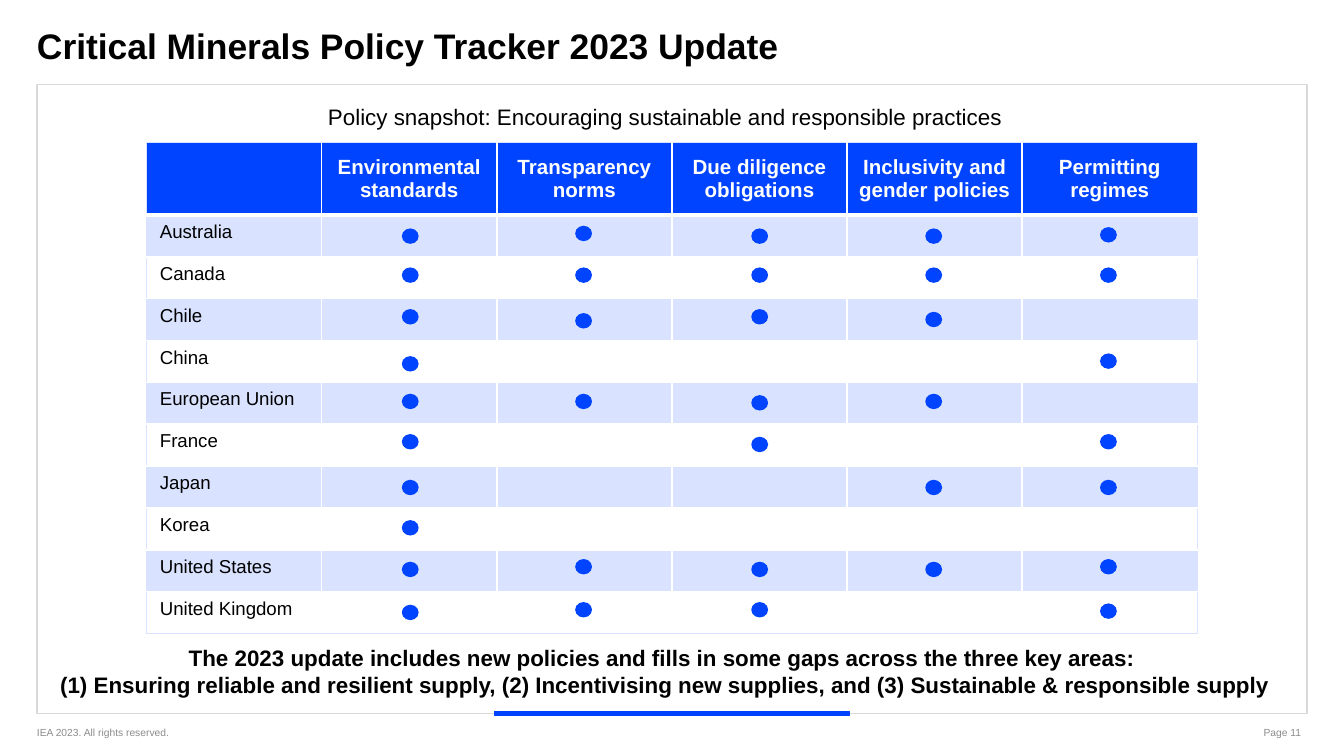
from dataclasses import dataclass
from typing import Any, Optional

from lxml.etree import SubElement
from pptx import Presentation
from pptx.dml.color import RGBColor
from pptx.enum.shapes import MSO_SHAPE
from pptx.enum.text import MSO_ANCHOR, MSO_AUTO_SIZE, PP_ALIGN
from pptx.oxml.ns import qn
from pptx.util import Emu, Pt

EMU_PER_PX = 4572
BLUE, PALE, WHITE, BLACK = "0044FF", "D9E3FF", "FFFFFF", "000000"
GREY, FRAME_GREY = "8C8C8C", "D9D9D9"


@dataclass(frozen=True)
class Box:
    left: int
    top: int
    width: int
    height: int


@dataclass(frozen=True)
class Style:
    size: float
    color: str = BLACK
    bold: bool = False
    align: Any = PP_ALIGN.LEFT
    anchor: Any = MSO_ANCHOR.TOP
    insets: tuple[int, int, int, int] = (0, 10, 20, 10)


@dataclass(frozen=True)
class Policy:
    country: str
    dot_tops: tuple[Optional[int], ...]


TABLE = Box(218, 212, 1564, 731)
HEADER_HEIGHT = 108
DOT_WIDTH, DOT_HEIGHT = 25, 23
DOT_LEFTS = (598, 856, 1118, 1377, 1637)
AREAS = (
    "Environmental standards",
    "Transparency norms",
    "Due diligence obligations",
    "Inclusivity and gender policies",
    "Permitting regimes",
)
POLICIES = (
    Policy("Australia", (340, 336, 340, 340, 338)),
    Policy("Canada", (398, 398, 398, 398, 398)),
    Policy("Chile", (460, 466, 460, 464, None)),
    Policy("China", (530, None, None, None, 526)),
    Policy("European Union", (586, 586, 588, 586, None)),
    Policy("France", (646, None, 650, None, 646)),
    Policy("Japan", (714, None, None, 714, 714)),
    Policy("Korea", (774, None, None, None, None)),
    Policy("United States", (836, 832, 836, 836, 832)),
    Policy("United Kingdom", (900, 896, 896, None, 898)),
)

HEADING = Style(19, bold=True, insets=(0, 0, 0, 0))
SNAPSHOT = Style(12, align=PP_ALIGN.CENTER)
SUMMARY = Style(12, bold=True, align=PP_ALIGN.CENTER, anchor=MSO_ANCHOR.MIDDLE,
                insets=(0, 0, 20, 16))
COPYRIGHT = Style(5.5, GREY, anchor=MSO_ANCHOR.MIDDLE)
PAGE = Style(5.5, GREY, align=PP_ALIGN.RIGHT, anchor=MSO_ANCHOR.MIDDLE)
AREA = Style(11, WHITE, True, PP_ALIGN.CENTER, MSO_ANCHOR.MIDDLE, (0, 0, 0, 0))
COUNTRY = Style(10, insets=(20, 10, 20, 10))
BLANK = Style(10, insets=(0, 0, 0, 0))


def px(length: int) -> Emu:
    return Emu(length * EMU_PER_PX)


def rgb(color: str) -> RGBColor:
    return RGBColor.from_string(color)


def apply(target: Any, values: dict[str, Any]) -> None:
    for name, value in values.items():
        setattr(target, name, value)


def place(box: Box) -> tuple[Emu, Emu, Emu, Emu]:
    return px(box.left), px(box.top), px(box.width), px(box.height)


def margins(style: Style) -> dict[str, Emu]:
    sides = ("margin_left", "margin_top", "margin_right", "margin_bottom")
    return dict(zip(sides, map(px, style.insets)))


def write(frame: Any, text: str, style: Style) -> None:
    paragraph = frame.paragraphs[0]
    apply(paragraph, {"alignment": style.align, "space_before": Pt(0), "space_after": Pt(0)})
    for index, line in enumerate(text.split("\n")):
        if index:
            paragraph.add_line_break()
            SubElement(paragraph._p[-1], qn("a:rPr"), sz=str(int(style.size * 100)))
        run = paragraph.add_run()
        run.text = line
        apply(run.font, {"name": "Arial", "size": Pt(style.size), "bold": style.bold})
        run.font.color.rgb = rgb(style.color)


def format_text(shape: Any, text: str, style: Style) -> None:
    apply(shape.text_frame, {"word_wrap": True, "auto_size": MSO_AUTO_SIZE.NONE,
                             "vertical_anchor": style.anchor, **margins(style)})
    write(shape.text_frame, text, style)


def draw_text(slide: Any, box: Box, text: str, style: Style) -> None:
    format_text(slide.shapes.add_textbox(*place(box)), text, style)


def draw_shape(slide: Any, kind: Any, box: Box, fill: Optional[str] = None,
               line: Optional[str] = None, width: float = 0) -> None:
    shape = slide.shapes.add_shape(kind, *place(box))
    shape.shadow.inherit = False
    if fill:
        shape.fill.solid()
        shape.fill.fore_color.rgb = rgb(fill)
    else:
        shape.fill.background()
    if line:
        shape.line.color.rgb = rgb(line)
        shape.line.width = Pt(width)
    else:
        shape.line.fill.background()


def draw_border(cell: Any, side: str, color: str, width: int) -> None:
    border = SubElement(cell._tc.get_or_add_tcPr(), qn(f"a:ln{side}"), w=str(int(Pt(width))))
    SubElement(SubElement(border, qn("a:solidFill")), qn("a:srgbClr"), val=color)


def draw_cell(cell: Any, row: int, column: int, text: str) -> None:
    edges = {"L": column == 0, "R": column == len(AREAS),
             "T": row == 0, "B": row == len(POLICIES)}
    for side, is_outer in edges.items():
        draw_border(cell, side, PALE if is_outer else WHITE,
                    3 if row == 0 and side == "B" else 1)
    cell.fill.solid()
    cell.fill.fore_color.rgb = rgb(BLUE if row == 0 else PALE if row % 2 else WHITE)
    style = BLANK if not text else COUNTRY if row else AREA
    apply(cell, {"vertical_anchor": style.anchor, **margins(style)})
    if text:
        write(cell.text_frame, text, style)


def draw_policy_table(slide: Any) -> None:
    entries = [("", *AREAS)]
    entries += [(policy.country, *[""] * len(AREAS)) for policy in POLICIES]
    table = slide.shapes.add_table(len(entries), len(AREAS) + 1, *place(TABLE)).table
    apply(table, {"first_row": False, "horz_banding": False})
    for column in table.columns:
        column.width = px(TABLE.width) // len(table.columns)
    for index, row in enumerate(table.rows):
        row.height = px(TABLE.height - HEADER_HEIGHT) // len(POLICIES) if index else px(HEADER_HEIGHT)
    for row, texts in enumerate(entries):
        for column, text in enumerate(texts):
            draw_cell(table.cell(row, column), row, column, text)


def draw_dots(slide: Any) -> None:
    for policy in POLICIES:
        for left, top in zip(DOT_LEFTS, policy.dot_tops):
            if top is not None:
                draw_shape(slide, MSO_SHAPE.OVAL, Box(left, top, DOT_WIDTH, DOT_HEIGHT), BLUE)


def main() -> None:
    deck = Presentation()
    apply(deck, {"slide_width": px(2000), "slide_height": px(1125)})
    slide = deck.slides.add_slide(deck.slide_layouts[5])
    heading = slide.shapes.title
    apply(heading, dict(zip(("left", "top", "width", "height"), place(Box(55, 36, 1748, 86)))))
    format_text(heading, "Critical Minerals Policy Tracker 2023 Update", HEADING)
    draw_text(slide, Box(55, 1070, 266, 40), "IEA 2023. All rights reserved.", COPYRIGHT)
    draw_text(slide, Box(1690, 1070, 266, 40), "Page 11", PAGE)
    draw_shape(slide, MSO_SHAPE.RECTANGLE, Box(55, 126, 1890, 936), line=FRAME_GREY, width=0.75)
    draw_shape(slide, MSO_SHAPE.RECTANGLE, Box(736, 1059, 528, 6), BLUE, BLUE, 0.5)
    draw_text(slide, Box(55, 958, 1890, 96),
              "The 2023 update includes new policies and fills in some gaps across the three key areas: \n"
              "(1) Ensuring reliable and resilient supply, (2) Incentivising new supplies, "
              "and (3) Sustainable & responsible supply", SUMMARY)
    draw_text(slide, Box(55, 143, 1890, 62),
              "Policy snapshot: Encouraging sustainable and responsible practices", SNAPSHOT)
    draw_policy_table(slide)
    draw_dots(slide)
    deck.save("out.pptx")


if __name__ == "__main__":
    main()
